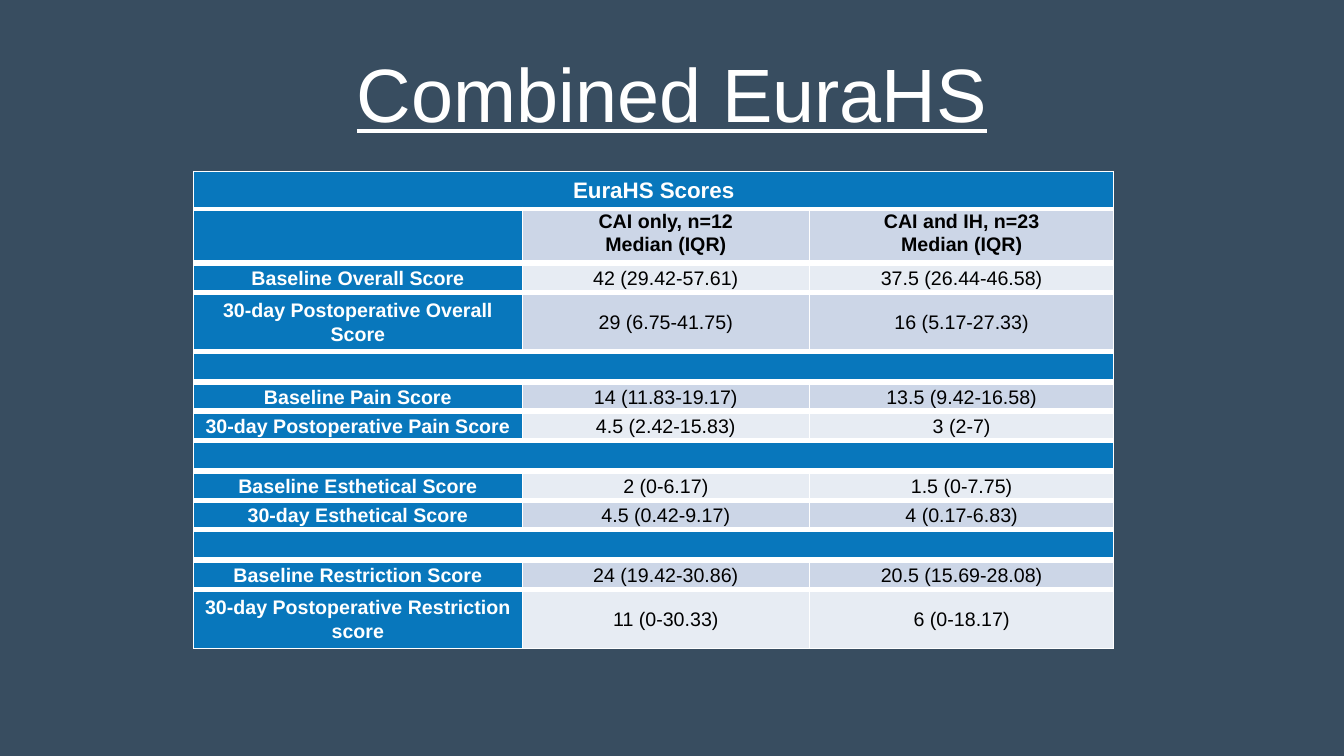
from dataclasses import dataclass

from lxml import etree
from pptx import Presentation
from pptx.dml.color import RGBColor
from pptx.enum.text import MSO_ANCHOR as Anchor, PP_ALIGN as Align
from pptx.oxml.ns import qn
from pptx.util import Cm, Pt


@dataclass(frozen=True)
class Theme:
    font: str = "Arial"
    background: str = "384D60"
    header: str = "0877BC"
    bands: tuple = ("E7ECF3", "CCD6E7")
    white: str = "FFFFFF"
    black: str = "000000"
    title_size: int = 54
    banner_size: int = 16
    body_size: int = 14
    thin: float = 1
    banner_rule: float = 3
    row_rule: float = 4.5


theme = Theme()


def write(paragraph, text, size, colour, spacing, bold=False):
    """Add one centred run and return its font."""
    paragraph.alignment = Align.CENTER
    paragraph.line_spacing = spacing
    run = paragraph.add_run()
    run.text = text
    run.font.name = theme.font
    run.font.size = Pt(size)
    run.font.bold = bold
    run.font.color.rgb = RGBColor.from_string(colour)
    return run.font


def set_borders(cell, top, bottom):
    """Draw white cell borders; the sides are always thin."""
    properties = cell._tc.get_or_add_tcPr()
    widths = {"lnL": theme.thin, "lnR": theme.thin, "lnT": top, "lnB": bottom}
    for side, width in widths.items():
        line = etree.SubElement(properties, qn(f"a:{side}"), w=str(Pt(width)))
        fill = etree.SubElement(line, qn("a:solidFill"))
        etree.SubElement(fill, qn("a:srgbClr"), val=theme.white)


presentation = Presentation()
presentation.slide_width = Cm(33.87)
presentation.slide_height = Cm(19.05)
slide = presentation.slides.add_slide(presentation.slide_layouts[6])
slide.background.fill.solid()
slide.background.fill.fore_color.rgb = RGBColor.from_string(theme.background)

title = slide.shapes.add_textbox(Cm(0), Cm(0.64), Cm(33.87), Cm(3.68))
title.text_frame.word_wrap = True
title.text_frame.vertical_anchor = Anchor.MIDDLE
title_font = write(title.text_frame.paragraphs[0], "Combined EuraHS",
                   theme.title_size, theme.white, 0.9)
title_font.underline = True

# One entry spans the whole row; an empty one is a divider.
scores = [
    ("EuraHS Scores",),
    ("", "CAI only, n=12\nMedian (IQR)", "CAI and IH, n=23\nMedian (IQR)"),
    ("Baseline Overall Score", "42 (29.42-57.61)", "37.5 (26.44-46.58)"),
    ("30-day Postoperative Overall Score", "29 (6.75-41.75)", "16 (5.17-27.33)"),
    ("",),
    ("Baseline Pain Score", "14 (11.83-19.17)", "13.5 (9.42-16.58)"),
    ("30-day Postoperative Pain Score", "4.5 (2.42-15.83)", "3 (2-7)"),
    ("",),
    ("Baseline Esthetical Score", "2 (0-6.17)", "1.5 (0-7.75)"),
    ("30-day Esthetical Score", "4.5 (0.42-9.17)", "4 (0.17-6.83)"),
    ("",),
    ("Baseline Restriction Score", "24 (19.42-30.86)", "20.5 (15.69-28.08)"),
    ("30-day Postoperative Restriction score", "11 (0-30.33)", "6 (0-18.17)"),
]
column_widths = [8.28, 7.24, 7.67]
single_height, double_height = 0.74, 1.49
special_heights = {0: 0.94, 1: 1.37, 3: double_height, 12: double_height}
row_heights = [special_heights.get(i, single_height) for i in range(len(scores))]
rules = [theme.thin, theme.banner_rule,
         *[theme.row_rule] * (len(scores) - 2), theme.thin]

table = slide.shapes.add_table(
    len(scores), len(column_widths), Cm(4.88), Cm(4.32),
    Cm(sum(column_widths)), Cm(sum(row_heights))).table
table.first_row = False
table.horz_banding = False
for column, width in zip(table.columns, column_widths):
    column.width = Cm(width)

for r, entries in enumerate(scores):
    table.rows[r].height = Cm(row_heights[r])
    spans_row = len(entries) == 1
    if spans_row:
        table.cell(r, 0).merge(table.cell(r, len(column_widths) - 1))
    for c in range(len(column_widths)):
        cell = table.cell(r, c)
        is_header = spans_row or c == 0
        set_borders(cell, rules[r], rules[r + 1])
        cell.fill.solid()
        cell.fill.fore_color.rgb = RGBColor.from_string(
            theme.header if is_header else theme.bands[r % 2])
        cell.margin_left = cell.margin_right = 0
        cell.margin_top = cell.margin_bottom = 0
        cell.vertical_anchor = Anchor.TOP if r == 1 else Anchor.MIDDLE
        if c >= len(entries) or not entries[c]:
            continue
        for i, text in enumerate(entries[c].split("\n")):
            frame = cell.text_frame
            paragraph = frame.add_paragraph() if i else frame.paragraphs[0]
            write(paragraph, text,
                  theme.banner_size if r == 0 else theme.body_size,
                  theme.white if is_header else theme.black,
                  1.07, bold=is_header or r == 1)

presentation.save("out.pptx")
